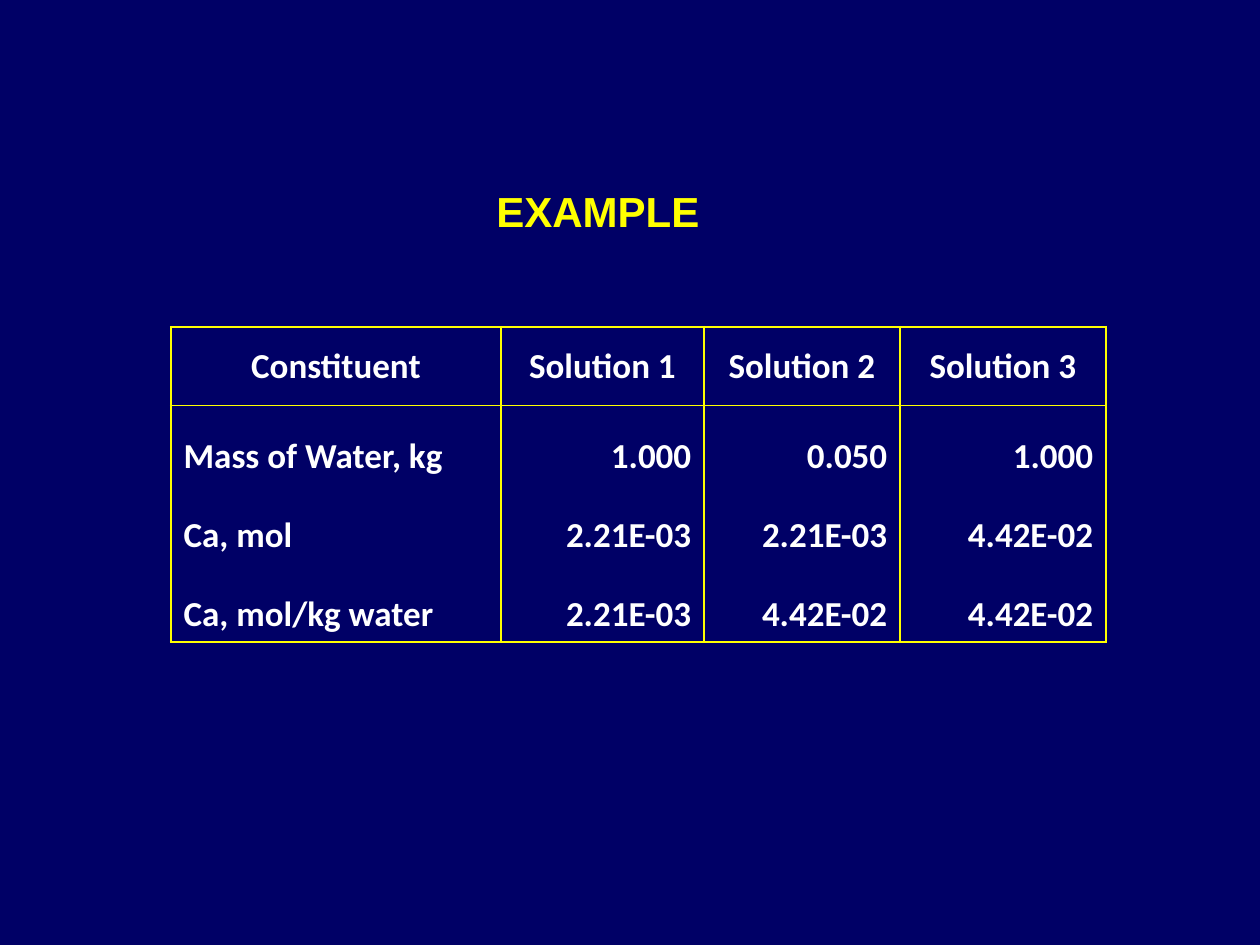
from lxml import etree
from pptx import Presentation
from pptx.dml.color import RGBColor
from pptx.enum.text import MSO_ANCHOR, PP_ALIGN
from pptx.oxml.ns import qn
from pptx.util import Emu, Pt

MIDDLE, BOTTOM = MSO_ANCHOR.MIDDLE, MSO_ANCHOR.BOTTOM
LEFT, CENTER, RIGHT = PP_ALIGN.LEFT, PP_ALIGN.CENTER, PP_ALIGN.RIGHT
COLORS = {"background": "000066", "accent": "FFFF00", "text": "FFFFFF"}
PIXEL = 914400 // 126
COLUMN_WIDTHS = [330, 203, 196, 206]
ROWS = [
    ["Constituent", "Solution 1", "Solution 2", "Solution 3"],
    ["Mass of Water, kg", "1.000", "0.050", "1.000"],
    ["Ca, mol", "2.21E-03", "2.21E-03", "4.42E-02"],
    ["Ca, mol/kg water", "2.21E-03", "4.42E-02", "4.42E-02"],
]


def px(length):
    """Turn pixels into EMU."""
    return Emu(length * PIXEL)


def color(name):
    """Look up a named colour."""
    return RGBColor.from_string(COLORS[name])


def style_paragraph(paragraph, font_name, size, color_name, alignment):
    """Set the bold font and alignment of a paragraph."""
    paragraph.alignment = alignment
    font = paragraph.font
    font.name, font.size, font.bold = font_name, Pt(size), True
    font.color.rgb = color(color_name)


def add_border(cell, side, width):
    """Draw one side of a cell, or hide it when the width is zero."""
    properties = cell._tc.get_or_add_tcPr()
    line = etree.SubElement(properties, qn(f"a:ln{side}"), w=str(Pt(width)))
    if width:
        fill = etree.SubElement(line, qn("a:solidFill"))
        etree.SubElement(fill, qn("a:srgbClr"), val=COLORS["accent"])
    else:
        etree.SubElement(line, qn("a:noFill"))


def border_widths(row):
    """Give the line width of each side for a cell in a row."""
    top = {0: 1.5, 1: 1}.get(row, 0)
    bottom = {0: 1, len(ROWS) - 1: 1.5}.get(row, 0)
    return {"L": 1.5, "R": 1.5, "T": top, "B": bottom}


def add_title(slide, left, top, width, height):
    """Place the slide heading."""
    frame = slide.shapes.add_textbox(px(left), px(top), px(width), px(height)).text_frame
    frame.word_wrap = False
    frame.text = "EXAMPLE"
    style_paragraph(frame.paragraphs[0], "Arial", 24, "accent", LEFT)


def add_solution_table(slide, left, top, width, height):
    """Place the table of solutions with its ruled columns."""
    table = slide.shapes.add_table(
        len(ROWS), len(COLUMN_WIDTHS), px(left), px(top), px(width), px(height)
    ).table
    table.first_row = table.horz_banding = False
    for column, column_width in zip(table.columns, COLUMN_WIDTHS):
        column.width = px(column_width)
    for row_index, values in enumerate(ROWS):
        for column_index, value in enumerate(values):
            cell = table.cell(row_index, column_index)
            cell.text = value
            cell.vertical_anchor = BOTTOM if row_index else MIDDLE
            body_alignment = RIGHT if column_index else LEFT
            alignment = body_alignment if row_index else CENTER
            style_paragraph(cell.text_frame.paragraphs[0], "Calibri", 20, "text", alignment)
            for side, line_width in border_widths(row_index).items():
                add_border(cell, side, line_width)
            cell.fill.background()


def main():
    """Build and save the slide."""
    presentation = Presentation()
    presentation.slide_width, presentation.slide_height = px(1260), px(945)
    slide = presentation.slides.add_slide(presentation.slide_layouts[6])
    slide.background.fill.solid()
    slide.background.fill.fore_color.rgb = color("background")
    add_solution_table(slide, 171, 327, sum(COLUMN_WIDTHS), 315)
    add_title(slide, 484, 179, 239, 63)
    presentation.save("out.pptx")


if __name__ == "__main__":
    main()
